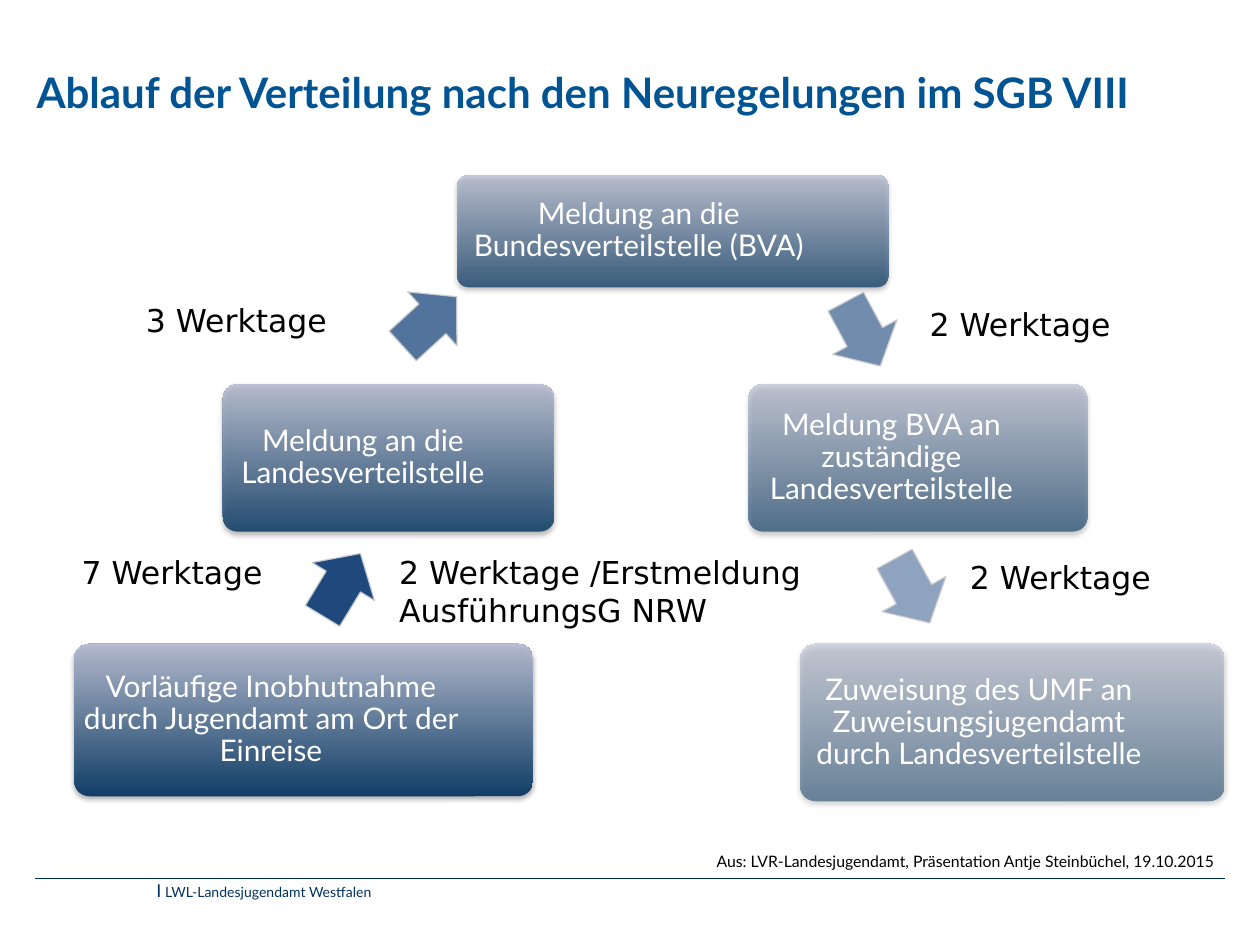
from dataclasses import dataclass

from lxml.etree import SubElement
from pptx import Presentation
from pptx.dml.color import RGBColor
from pptx.enum.shapes import MSO_CONNECTOR as Connector, MSO_SHAPE as Shape
from pptx.enum.text import MSO_ANCHOR as Anchor, MSO_AUTO_SIZE as AutoSize, PP_ALIGN as Align
from pptx.oxml.ns import qn
from pptx.util import Inches, Pt


@dataclass(frozen=True)
class Theme:
    """Colours, fonts and type sizes of the slide."""
    title: str = "005493"
    navy: str = "00325F"
    mist: str = "B2B9CF"
    arrow: str = "1F497D"
    arrow_edge: str = "CCCED2"
    white: str = "FFFFFF"
    black: str = "000000"
    font: str = "Lato"
    label_font: str = "DejaVu Sans"
    marker_font: str = "Arial"
    title_size: float = 24
    step_size: float = 17
    label_size: float = 18
    marker_size: float = 10.5
    source_size: float = 9
    footer_size: float = 8


@dataclass(frozen=True)
class Box:
    """A rectangle in inches."""
    left: float
    top: float
    width: float
    height: float

    def inner(self, left, top, width, height):
        """Return a rectangle placed relative to this one."""
        return Box(self.left + left, self.top + top, width, height)

    def lengths(self):
        """Return left, top, width and height as lengths."""
        return [Inches(value) for value in (self.left, self.top, self.width, self.height)]


THEME = Theme()


def apply(target, values):
    """Set each named attribute on the target."""
    for name, value in values.items():
        setattr(target, name, value)


def set_insets(frame, left, top, right, bottom):
    """Set the four margins of a text frame in inches."""
    sides = ("left", "top", "right", "bottom")
    insets = (left, top, right, bottom)
    apply(frame, {f"margin_{side}": Inches(inset) for side, inset in zip(sides, insets)})


def write(frame, text, font, size, color, bold=False, **paragraph_format):
    """Fill a text frame with one formatted paragraph per line."""
    frame.text = text
    for paragraph in frame.paragraphs:
        apply(paragraph, paragraph_format)
        for run in paragraph.runs:
            apply(run.font, {"name": font, "size": Pt(size), "bold": bold})
            run.font.color.rgb = RGBColor.from_string(color)


def add_text(slide, box, text, font, size, color, insets=None, frame_format=None, **paragraph_format):
    """Add a wrapping text box."""
    frame = slide.shapes.add_textbox(*box.lengths()).text_frame
    apply(frame, {"word_wrap": True, **(frame_format or {})})
    if insets:
        set_insets(frame, *insets)
    write(frame, text, font, size, color, **paragraph_format)


def set_alpha(element, percent):
    """Give every colour inside an element the same opacity."""
    for color in element.iter(qn("a:srgbClr")):
        SubElement(color, qn("a:alpha"), val=str(percent * 1000))


def add_shadow(shape):
    """Add a soft shadow below a shape."""
    effects = shape._element.spPr.find(qn("a:effectLst"))
    shadow = SubElement(effects, qn("a:outerShdw"), blurRad=str(Pt(3.1)), dist=str(Pt(1.8)),
                        dir="5400000", rotWithShape="0")
    SubElement(shadow, qn("a:srgbClr"), val=THEME.black)
    set_alpha(shadow, 35)


def add_title(slide, box):
    """Place the slide title."""
    title = slide.shapes.title
    apply(title, dict(zip(("left", "top", "width", "height"), box.lengths())))
    frame = title.text_frame
    apply(frame, {"word_wrap": True, "auto_size": AutoSize.NONE, "vertical_anchor": Anchor.TOP})
    set_insets(frame, 0, 0, 0, 0)
    write(frame, "Ablauf der Verteilung nach den Neuregelungen im SGB VIII", THEME.font,
          THEME.title_size, THEME.title, bold=True, alignment=Align.LEFT, line_spacing=Pt(32))


def add_step(slide, box, text_width, opacity, text):
    """Add one step with its gradient panel and text."""
    panel = slide.shapes.add_shape(Shape.ROUNDED_RECTANGLE, *box.lengths())
    panel.adjustments[0] = 0.1
    panel.shadow.inherit = False
    panel.line.fill.background()
    panel.fill.gradient()
    panel.fill.gradient_angle = 90
    for stop, color in zip(panel.fill.gradient_stops, (THEME.navy, THEME.mist)):
        stop.color.rgb = RGBColor.from_string(color)
    set_alpha(panel._element.spPr.find(qn("a:gradFill")), opacity)
    add_shadow(panel)
    add_text(slide, box.inner(0, 0, text_width, box.height), text, THEME.font, THEME.step_size,
             THEME.white, (0.07,) * 4, {"vertical_anchor": Anchor.MIDDLE},
             alignment=Align.CENTER, line_spacing=0.9, space_after=Pt(6))


def add_arrow(slide, box, rotation, opacity):
    """Add one block arrow between two steps."""
    arrow = slide.shapes.add_shape(Shape.DOWN_ARROW, *box.lengths())
    arrow.rotation = rotation
    arrow.adjustments[0], arrow.adjustments[1] = 0.55, 0.45
    arrow.shadow.inherit = False
    arrow.fill.solid()
    arrow.fill.fore_color.rgb = RGBColor.from_string(THEME.arrow)
    arrow.line.color.rgb = RGBColor.from_string(THEME.arrow_edge)
    arrow.line.width = Pt(0.75)
    properties = arrow._element.spPr
    set_alpha(properties.find(qn("a:solidFill")), opacity)
    set_alpha(properties.find(qn("a:ln")), 90)


def add_process(slide, box):
    """Place the steps, the arrows and the time limits."""
    steps = [
        ((0, 3.72, 3.64, 1.21), 3.12, "Vorläufige Inobhutnahme durch Jugendamt am Ort der Einreise"),
        ((1.18, 1.66, 2.63, 1.17), 2.22, "Meldung an die Landesverteilstelle"),
        ((3.04, 0, 3.42, 0.89), 2.88, "Meldung an die Bundesverteilstelle (BVA)"),
        ((5.35, 1.66, 2.69, 1.17), 2.27, "Meldung BVA an zuständige Landesverteilstelle"),
        ((5.76, 3.72, 3.37, 1.25), 2.84,
         "Zuweisung des UMF an Zuweisungsjugendamt durch Landesverteilstelle"),
    ]
    for index, (place, text_width, text) in enumerate(steps):
        add_step(slide, box.inner(*place), text_width, 90 - 10 * index, text)

    arrows = [(1.83, 2.96, 211.3, 100), (2.53, 0.87, 227.6, 77),
              (5.97, 0.97, 331.8, 63), (6.36, 3.01, 331.2, 50)]
    for left, top, rotation, opacity in arrows:
        add_arrow(slide, box.inner(left, top, 0.58, 0.58), rotation, opacity)

    limits = [
        ((0.47, 0.95, 2.13, 0.4), "3 Werktage"),
        ((6.69, 0.98, 2.13, 0.4), "2 Werktage"),
        ((-0.04, 2.95, 2.13, 0.4), "7 Werktage"),
        ((7.01, 2.99, 2.13, 0.4), "2 Werktage"),
        ((2.48, 2.95, 3.47, 0.71), "2 Werktage /Erstmeldung\nAusführungsG NRW"),
    ]
    for place, text in limits:
        add_text(slide, box.inner(*place), text, THEME.label_font, THEME.label_size, THEME.black,
                 frame_format={"auto_size": AutoSize.SHAPE_TO_FIT_TEXT})


def add_footer(slide, box):
    """Place the source, the rule and the sender."""
    add_text(slide, box.inner(0.01, 0, 9.44, 0.54),
             "Aus: LVR-Landesjugendamt, Präsentation Antje Steinbüchel, 19.10.2015", THEME.font,
             THEME.source_size, THEME.black, (0.1, 0.2, 0.1, 0.05), alignment=Align.RIGHT)
    rule_top = Inches(box.top + 0.41)
    rule = slide.shapes.add_connector(Connector.STRAIGHT, Inches(box.left), rule_top,
                                      Inches(box.left + box.width), rule_top)
    rule.line.color.rgb = RGBColor.from_string(THEME.navy)
    rule.line.width = Pt(0.5)
    SubElement(rule._element.spPr, qn("a:effectLst"))
    add_text(slide, box.inner(0.96, 0.42, 0.11, 0.18), "I", THEME.marker_font,
             THEME.marker_size, THEME.navy, (0,) * 4)
    add_text(slide, box.inner(1.03, 0.45, 7.25, 0.16), "LWL-Landesjugendamt Westfalen",
             THEME.font, THEME.footer_size, THEME.navy, (0,) * 4)


def main():
    """Build and save the presentation."""
    presentation = Presentation()
    apply(presentation, {"slide_width": Inches(10), "slide_height": Inches(7.5)})
    slide = presentation.slides.add_slide(presentation.slide_layouts[5])
    add_title(slide, Box(0.29, 0.48, 9.5, 0.6))
    add_process(slide, Box(0.59, 1.39, 9.13, 4.97))
    add_footer(slide, Box(0.28, 6.56, 9.44, 0.61))
    presentation.save("out.pptx")


if __name__ == "__main__":
    main()
